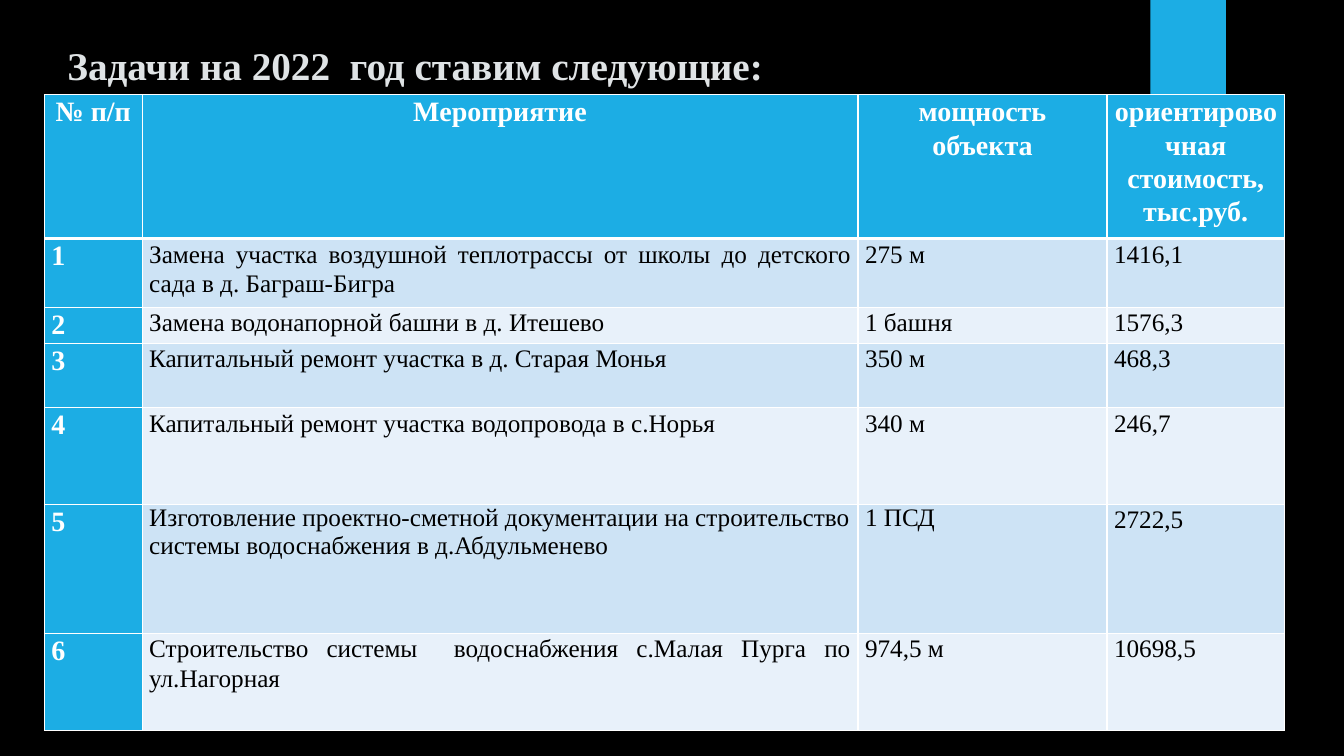
import pptx
import pptx.dml.color
import pptx.enum.shapes
import pptx.enum.text
import pptx.util
import lxml.etree

Inches, Pt = pptx.util.Inches, pptx.util.Pt
ALIGN = pptx.enum.text.PP_ALIGN
FONT = "Times New Roman"
ACCENT, WHITE, BLACK = "1CADE4", "FFFFFF", "000000"
BANDS = ["E8F1FA", "CDE3F5"]
NS = "http://schemas.openxmlformats.org/drawingml/2006/main"


def paint(color_format, value):
    color_format.rgb = pptx.dml.color.RGBColor.from_string(value)


def add_run(p, text, size, color, bold):
    r = p.add_run()
    r.text = text
    r.font.name = FONT
    r.font.size = Pt(size)
    r.font.bold = bold
    paint(r.font.color, color)


prs = pptx.Presentation()
prs.slide_width, prs.slide_height = Inches(13.33), Inches(7.5)
s = prs.slides.add_slide(prs.slide_layouts[6])
s.background.fill.solid()
paint(s.background.fill.fore_color, BLACK)

sp = s.shapes.add_shape(
    pptx.enum.shapes.MSO_SHAPE.RECTANGLE,
    Inches(11.41), 0, Inches(0.75), Inches(1.25))
sp.shadow.inherit = False
sp.fill.solid()
paint(sp.fill.fore_color, ACCENT)
sp.line.fill.background()

sp = s.shapes.add_textbox(Inches(0.57), Inches(0.35), Inches(12.51), Inches(0.59))
tf = sp.text_frame
tf.word_wrap = True
tf.vertical_anchor = pptx.enum.text.MSO_ANCHOR.MIDDLE
add_run(tf.paragraphs[0], "Задачи на 2022  год ставим следующие:", 28, "DFE3E5", True)

rows = [
    ["№ п/п", "Мероприятие", "мощность объекта", "ориентировочная стоимость, тыс.руб."],
    ["1", "Замена участка воздушной теплотрассы от школы до детского сада в д. Баграш-Бигра",
     "275 м", "1416,1"],
    ["2", "Замена водонапорной башни в д. Итешево", "1 башня", "1576,3"],
    ["3", "Капитальный ремонт участка в д. Старая Монья", "350 м", "468,3"],
    ["4", "Капитальный ремонт участка водопровода в с.Норья", "340 м", "246,7"],
    ["5", "Изготовление проектно-сметной документации на строительство "
          "системы водоснабжения в д.Абдульменево", "1 ПСД", "2722,5"],
    ["6", "Строительство системы  водоснабжения с.Малая Пурга по ул.Нагорная",
     "974,5 м", "10698,5"],
]
widths = [0.97, 7.1, 2.47, 1.76]
heights = [1.34, 0.68, 0.34, 0.64, 0.96, 1.28, 0.96]
left_aligned = [(5, 1), (5, 2)]

table = s.shapes.add_table(
    len(rows), len(widths), Inches(0.44), Inches(0.94),
    Inches(sum(widths)), Inches(sum(heights))).table
table.horz_banding = False
for column, width in zip(table.columns, widths):
    column.width = Inches(width)
for row, height in zip(table.rows, heights):
    row.height = Inches(height)

for i, texts in enumerate(rows):
    for j, text in enumerate(texts):
        cell = table.cell(i, j)
        cell.margin_left = cell.margin_right = Inches(0.07)
        cell.margin_top = cell.margin_bottom = 0
        tcPr = cell._tc.get_or_add_tcPr()
        for side in "LRTB":
            thick = (i, side) in [(0, "B"), (1, "T")]
            ln = lxml.etree.SubElement(
                tcPr, f"{{{NS}}}ln{side}", w=str(Pt(3 if thick else 1)))
            fill = lxml.etree.SubElement(ln, f"{{{NS}}}solidFill")
            lxml.etree.SubElement(fill, f"{{{NS}}}srgbClr", val=WHITE)
        heading = i == 0 or j == 0
        cell.fill.solid()
        paint(cell.fill.fore_color, ACCENT if heading else BANDS[i % 2])
        p = cell.text_frame.paragraphs[0]
        if (i, j) in left_aligned:
            p.alignment = ALIGN.LEFT
        else:
            p.alignment = ALIGN.JUSTIFY if i else ALIGN.CENTER
            p.line_spacing = 1.07
        add_run(p, text, 20 if heading else 18, WHITE if heading else BLACK, heading)

prs.save("out.pptx")
